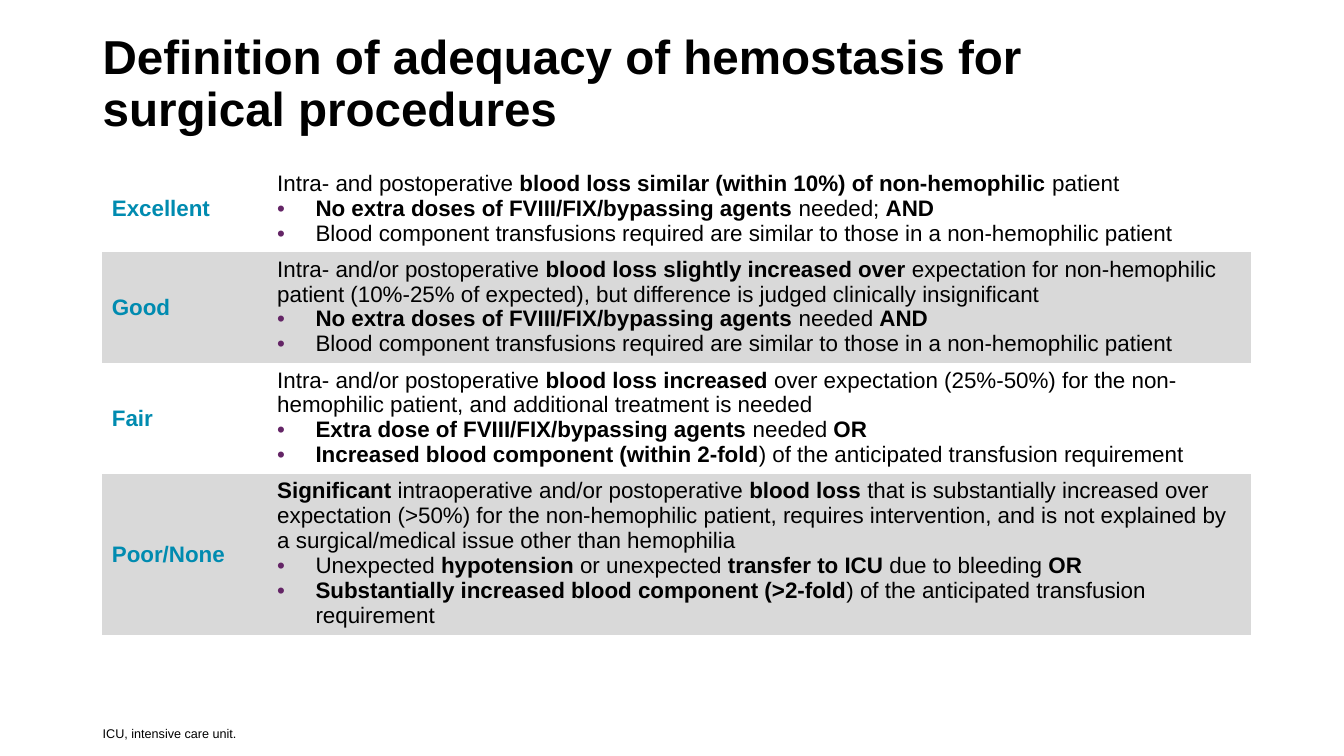
from dataclasses import dataclass

from lxml import etree
from pptx import Presentation
from pptx.dml.color import RGBColor
from pptx.enum.text import MSO_ANCHOR
from pptx.oxml.ns import qn
from pptx.util import Inches, Pt

MIDDLE = MSO_ANCHOR.MIDDLE
BOTTOM = MSO_ANCHOR.BOTTOM
TOP = MSO_ANCHOR.TOP
NO_GRID_STYLE = "{2D5ABB26-0587-4C30-8999-92F81FD0307C}"


@dataclass(frozen=True)
class Theme:
    font: str = "Arial"
    text: str = "000000"
    grade: str = "008BB0"
    bullet: str = "642566"
    bands: tuple = ("FFFFFF", "D9D9D9")
    title_size: int = 34
    table_size: int = 16
    note_size: int = 9


THEME = Theme()

TITLE = "Definition of adequacy of hemostasis for \vsurgical procedures"
FOOTNOTE = "ICU, intensive care unit."
COLUMN_WIDTHS = (1.64, 9.76)
LINE_HEIGHT = 0.25
CELL_PADDING = 0.1

SIMILAR_TRANSFUSIONS = (
    "Blood component transfusions required are similar to those in a non-hemophilic patient"
)

# Asterisks delimit bold spans.
GRADES = [
    ("Excellent", 3, [
        "Intra- and postoperative *blood loss similar (within 10%) of non-hemophilic *patient",
        "*No extra doses of FVIII/FIX/bypassing agents *needed; *AND*",
        SIMILAR_TRANSFUSIONS,
    ]),
    ("Good", 4, [
        "Intra- and/or postoperative *blood loss slightly increased over *expectation for "
        "non-hemophilic patient (10%-25% of expected), but difference is judged clinically "
        "insignificant",
        "*No extra doses of FVIII/FIX/bypassing agents *needed *AND*",
        SIMILAR_TRANSFUSIONS,
    ]),
    ("Fair", 4, [
        "Intra- and/or postoperative *blood loss increased *over expectation (25%-50%) for "
        "the non- hemophilic patient, and additional treatment is needed",
        "*Extra dose of FVIII/FIX/bypassing agents *needed *OR*",
        "*Increased blood component (within 2-fold*) of the anticipated transfusion requirement",
    ]),
    ("Poor/None", 6, [
        "*Significant* intraoperative and/or postoperative *blood loss *that is substantially "
        "increased over expectation (>50%) for the non-hemophilic patient, requires "
        "intervention, and is not explained by a surgical/medical issue other than hemophilia",
        "Unexpected *hypotension* or unexpected *transfer to ICU *due to bleeding *OR*",
        "*Substantially increased blood component (>2-fold*) of the anticipated transfusion "
        "requirement",
    ]),
]


def add_bullet(para):
    properties = para._p.get_or_add_pPr()
    properties.set("marL", str(Inches(0.38)))
    properties.set("indent", str(-Inches(0.38)))
    color = etree.SubElement(properties, qn("a:buClr"))
    etree.SubElement(color, qn("a:srgbClr"), val=THEME.bullet)
    etree.SubElement(properties, qn("a:buFont"), typeface=THEME.font)
    etree.SubElement(properties, qn("a:buChar"), char="•")


def write(para, text, size, color=THEME.text, bold=False, bullet=False, spacing=None):
    if bullet:
        add_bullet(para)
    if spacing:
        para.line_spacing = spacing
    for index, part in enumerate(text.split("*")):
        for line_index, line in enumerate(part.split("\v")):
            if line_index:
                para.add_line_break()
            if not line:
                continue
            span = para.add_run()
            span.text = line
            span.font.name = THEME.font
            span.font.size = Pt(size)
            span.font.bold = bold or index % 2 == 1
            span.font.color.rgb = RGBColor.from_string(color)


def add_text(page, box, text, anchor, bottom_inset=0.05, **text_format):
    frame = page.shapes.add_textbox(*map(Inches, box)).text_frame
    frame.word_wrap = True
    frame.vertical_anchor = anchor
    frame.margin_bottom = Inches(bottom_inset)
    write(frame.paragraphs[0], text, **text_format)


def add_title(page, box):
    add_text(page, box, TITLE, MIDDLE, size=THEME.title_size, bold=True, spacing=0.9)


def add_footnote(page, box):
    add_text(page, box, FOOTNOTE, BOTTOM, bottom_inset=0, size=THEME.note_size)


def fill_cell(cell, color, anchor):
    cell.fill.solid()
    cell.fill.fore_color.rgb = RGBColor.from_string(color)
    cell.vertical_anchor = anchor


def add_grade_table(page, left, top):
    heights = [lines * LINE_HEIGHT + CELL_PADDING for _, lines, _ in GRADES]
    size = (sum(COLUMN_WIDTHS), sum(heights))
    table = page.shapes.add_table(
        len(GRADES), len(COLUMN_WIDTHS), *map(Inches, (left, top, *size))
    ).table
    table.first_row = False
    table.horz_banding = False
    table._tbl.tblPr.find(qn("a:tableStyleId")).text = NO_GRID_STYLE
    for column, width in zip(table.columns, COLUMN_WIDTHS):
        column.width = Inches(width)
    for index, (grade, _, criteria) in enumerate(GRADES):
        table.rows[index].height = Inches(heights[index])
        band = THEME.bands[index % 2]
        grade_cell, criteria_cell = table.rows[index].cells
        fill_cell(grade_cell, band, MIDDLE)
        fill_cell(criteria_cell, band, TOP)
        write(grade_cell.text_frame.paragraphs[0], grade, THEME.table_size,
              color=THEME.grade, bold=True)
        frame = criteria_cell.text_frame
        for position, criterion in enumerate(criteria):
            para = frame.add_paragraph() if position else frame.paragraphs[0]
            write(para, criterion, THEME.table_size, bullet=position > 0)


def main():
    deck = Presentation()
    deck.slide_width = Inches(13.33)
    deck.slide_height = Inches(7.5)
    page = deck.slides.add_slide(deck.slide_layouts[6])
    add_grade_table(page, 1.01, 1.65)
    add_title(page, (0.92, 0.25, 11.5, 1.19))
    add_footnote(page, (0.92, 6.95, 10.85, 0.4))
    deck.save("out.pptx")


if __name__ == "__main__":
    main()
